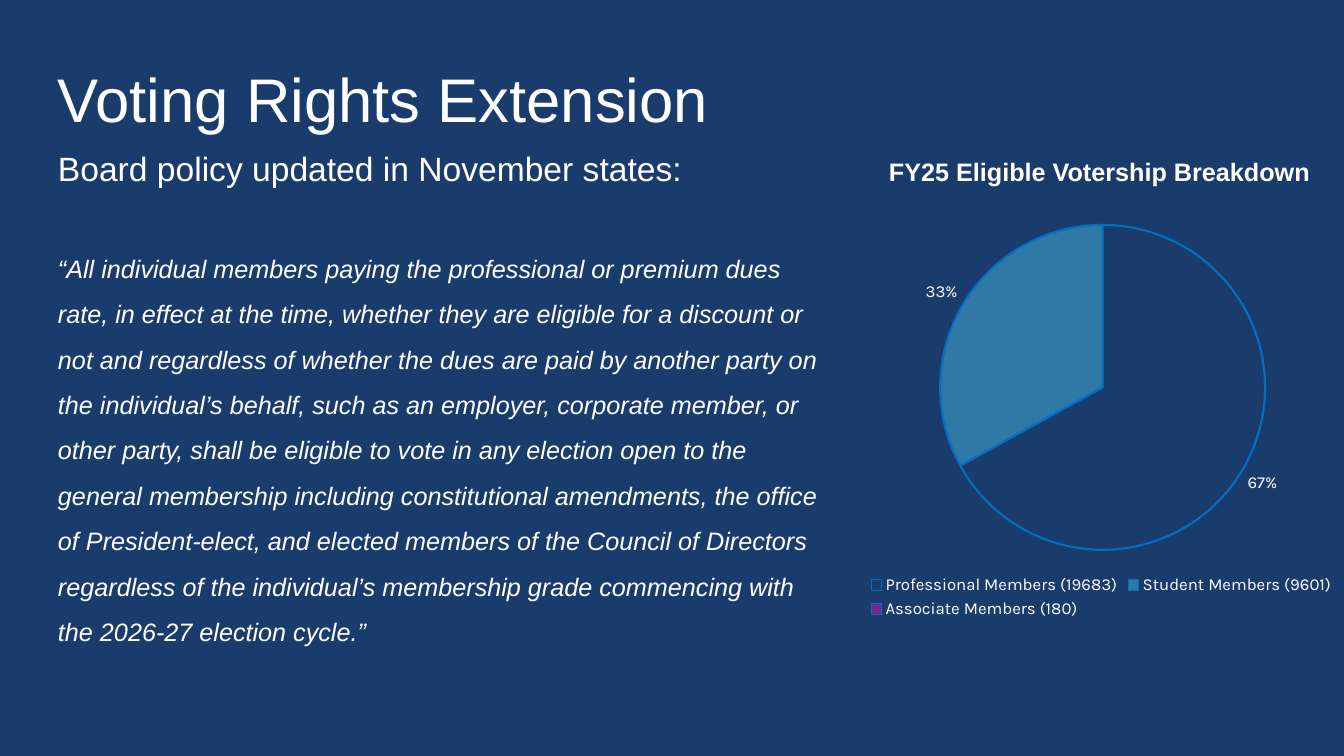
from dataclasses import dataclass

from pptx import Presentation
from pptx.chart.data import CategoryChartData
from pptx.dml.color import RGBColor
from pptx.enum.chart import XL_CHART_TYPE, XL_LABEL_POSITION, XL_LEGEND_POSITION
from pptx.slide import Slide
from pptx.util import Emu, Pt

EMU_PER_PX = 914400 / 100.8


@dataclass(frozen=True)
class Theme:
    navy: RGBColor = RGBColor(0x1A, 0x3C, 0x6D)
    teal: RGBColor = RGBColor(0x30, 0x79, 0xA7)
    purple: RGBColor = RGBColor(0x74, 0x2A, 0x88)
    outline: RGBColor = RGBColor(0x00, 0x70, 0xBF)
    white: RGBColor = RGBColor(0xFF, 0xFF, 0xFF)
    text_font: str = "Arial"
    chart_font: str = "Karla"
    title_size: int = 44
    lead_size: int = 24
    text_size: int = 18
    chart_size: int = 12


THEME = Theme()


@dataclass(frozen=True)
class Box:
    left: int
    top: int
    width: int
    height: int

    def emu(self) -> list[Emu]:
        return [px(n) for n in (self.left, self.top, self.width, self.height)]


@dataclass(frozen=True)
class Para:
    text: str
    size: int
    line_spacing: float = 1.0
    space_before: int = 0
    bold: bool = False
    italic: bool = False


@dataclass(frozen=True)
class TextBlock:
    box: Box
    paras: tuple[Para, ...]
    inset_x: int = 10
    inset_y: int = 5


@dataclass(frozen=True)
class Slice:
    label: str
    share: float
    color: RGBColor


TEXT_BLOCKS = (
    TextBlock(Box(48, 64, 1248, 129),
              (Para("Voting Rights Extension", THEME.title_size, 0.9),)),
    TextBlock(Box(58, 153, 763, 556), (
        Para("Board policy updated in November states:", THEME.lead_size, 0.9),
        Para("“All individual members paying the professional or premium dues rate, "
             "in effect at the time, whether they are eligible for a discount or not "
             "and regardless of whether the dues are paid by another party on the "
             "individual’s behalf, such as an employer, corporate member, or other "
             "party, shall be eligible to vote in any election open to the general "
             "membership including constitutional amendments, the office of "
             "President-elect, and elected members of the Council of Directors "
             "regardless of the individual’s membership grade commencing with the "
             "2026-27 election cycle.”",
             THEME.text_size, 1.5, space_before=35, italic=True),
    ), inset_x=0, inset_y=0),
    TextBlock(Box(879, 151, 455, 40),
              (Para("FY25 Eligible Votership Breakdown", THEME.text_size, bold=True),)),
)

CHART_BOX = Box(829, 211, 545, 412)
SLICES = (
    Slice("Professional Members (19683)", 0.67, THEME.navy),
    Slice("Student Members (9601)", 0.33, THEME.teal),
    Slice("Associate Members (180)", 0, THEME.purple),
)


def px(n: int) -> Emu:
    return Emu(round(n * EMU_PER_PX))


def set_format(target: object, values: dict[str, object]) -> None:
    for name, value in values.items():
        setattr(target, name, value)


def style_font(font: object, name: str, size: int, **extra: bool) -> None:
    set_format(font, {"name": name, "size": Pt(size), **extra})
    font.color.rgb = THEME.white


def add_text(s: Slide, block: TextBlock) -> None:
    tf = s.shapes.add_textbox(*block.box.emu()).text_frame
    set_format(tf, {
        "word_wrap": True,
        "margin_left": px(block.inset_x), "margin_right": px(block.inset_x),
        "margin_top": px(block.inset_y), "margin_bottom": px(block.inset_y),
    })
    for i, para in enumerate(block.paras):
        p = tf.add_paragraph() if i else tf.paragraphs[0]
        set_format(p, {"line_spacing": para.line_spacing,
                       "space_before": Pt(para.space_before)})
        r = p.add_run()
        r.text = para.text
        style_font(r.font, THEME.text_font, para.size,
                   bold=para.bold, italic=para.italic)


def add_pie(s: Slide, box: Box, slices: tuple[Slice, ...]) -> None:
    data = CategoryChartData(number_format="0%")
    data.categories = [piece.label for piece in slices]
    data.add_series("Series 1", [piece.share for piece in slices])
    chart = s.shapes.add_chart(XL_CHART_TYPE.PIE, *box.emu(), data).chart
    set_format(chart, {"has_title": False, "has_legend": True})
    style_font(chart.font, THEME.chart_font, THEME.chart_size)
    set_format(chart.legend, {"position": XL_LEGEND_POSITION.BOTTOM,
                              "include_in_layout": False})
    style_font(chart.legend.font, THEME.chart_font, THEME.chart_size)

    plot = chart.plots[0]
    set_format(plot, {"vary_by_categories": True, "has_data_labels": True})
    # The empty sections of the number format hide the label of a zero share.
    set_format(plot.data_labels, {
        "show_value": True, "show_percentage": False,
        "number_format": "0%;;", "number_format_is_linked": False,
        "position": XL_LABEL_POSITION.OUTSIDE_END,
    })
    style_font(plot.data_labels.font, THEME.chart_font, THEME.chart_size)

    series = plot.series[0]
    for i, piece in enumerate(slices):
        look = series.points[i].format
        look.fill.solid()
        look.fill.fore_color.rgb = piece.color
        look.line.color.rgb = THEME.outline
        look.line.width = Pt(1.5)


def main() -> None:
    prs = Presentation()
    set_format(prs, {"slide_width": px(1344), "slide_height": px(756)})
    s = prs.slides.add_slide(prs.slide_layouts[6])
    s.background.fill.solid()
    s.background.fill.fore_color.rgb = THEME.navy
    for block in TEXT_BLOCKS:
        add_text(s, block)
    add_pie(s, CHART_BOX, SLICES)
    prs.save("out.pptx")


if __name__ == "__main__":
    main()
